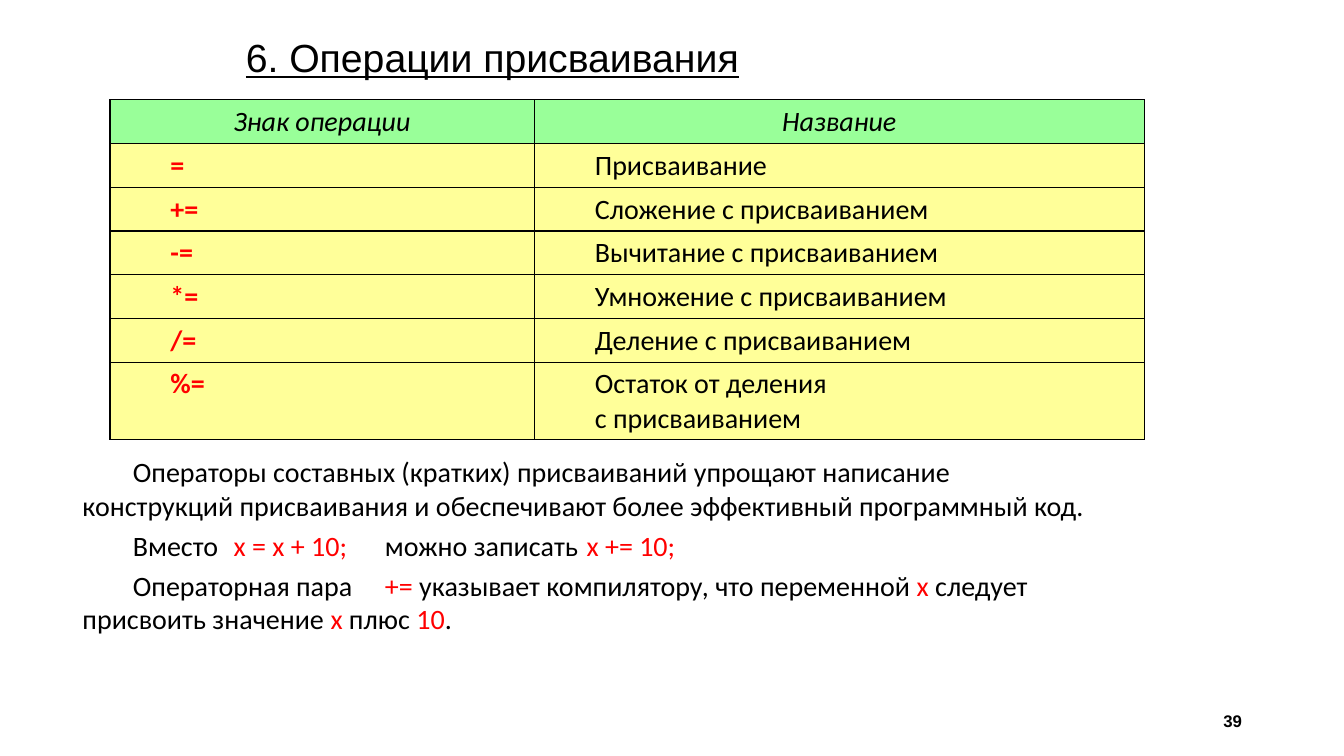
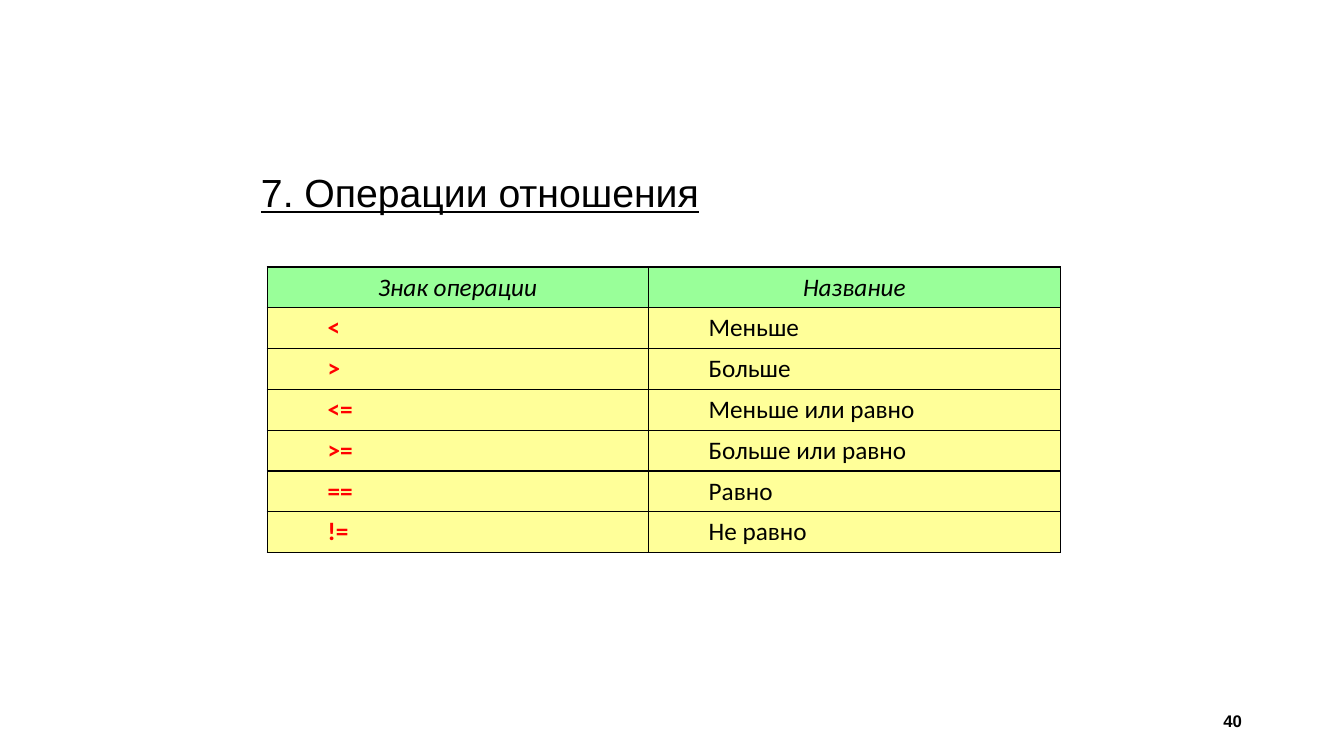
"""Build two slides on assignment and comparison operators."""
from lxml import etree
from pptx import Presentation
from pptx.dml.color import RGBColor as Color
from pptx.enum.text import MSO_ANCHOR as Anchor, PP_ALIGN as Align
from pptx.oxml.ns import qn
from pptx.util import Inches, Pt

BLACK = RGB = Color(0x00, 0x00, 0x00)
RED = Color(0xFF, 0x00, 0x00)
GREEN = Color(0x99, 0xFF, 0x99)
YELLOW = Color(0xFF, 0xFF, 0x99)
HEAD_FONT, TEXT_FONT = "Arial", "Calibri"
WIDE, HIGH = Inches(13.33), Inches(7.5)
INDENT = Inches(0.5)

HEADS = ("Знак операции", "Название")
NUMBER = (70.65, 92.67, 22.5, 5.33)
BODY = (5.4, 59.47, 77.7, 31.47)

NOTES = [
    ((), [("Операторы составных (кратких) присваиваний упрощают написание "
           "конструкций присваивания и обеспечивают более эффективный "
           "программный код.", BLACK)]),
    ((1.53, 2.84, 4.95), [("Вместо\t", BLACK), ("x = x + 10;\t", RED),
                          ("можно записать\t", BLACK), ("x += 10;", RED)]),
    ((2.8,), [("Операторная пара\t", BLACK), ("+=", RED),
              (" указывает компилятору, что переменной ", BLACK), ("x", RED),
              (" следует присвоить значение ", BLACK), ("x", RED),
              (" плюс ", BLACK), ("10", RED), (".", BLACK)]),
]

SLIDES = [
    dict(num="39", title="6. Операции присваивания",
         spot=(17.55, 3.73), grid=(8.18, 13.2), cols=(31.58, 45.38),
         rows=[5.47] * 6 + [9.33], size=20, notes=NOTES,
         ops=[("=", "Присваивание"),
              ("+=", "Сложение с присваиванием"),
              ("-=", "Вычитание с присваиванием"),
              ("*=", "Умножение с присваиванием"),
              ("/=", "Деление с присваиванием"),
              ("%=", "Остаток от деления\nс присваиванием")]),
    dict(num="40", title="7. Операции отношения",
         spot=(18.68, 21.6), grid=(19.88, 35.33), cols=(28.35, 30.68),
         rows=[5.4] * 7, size=18, notes=[],
         ops=[("<", "Меньше"), (">", "Больше"),
              ("<=", "Меньше или равно"), (">=", "Больше или равно"),
              ("==", "Равно"), ("!=", "Не равно")]),
]


def across(share):
    return round(WIDE * share / 100)


def down(share):
    return round(HIGH * share / 100)


def add_run(para, text, size, color=BLACK, face=TEXT_FONT, bold=False,
            slant=False, under=False):
    for i, line in enumerate(text.split("\n")):
        if i:
            para.add_line_break()
        run = para.add_run()
        run.text = line
        font = run.font
        font.name, font.size, font.color.rgb = face, Pt(size), color
        font.bold, font.italic, font.underline = bold, slant, under


def add_box(slide, x, y, w, h):
    box = slide.shapes.add_textbox(across(x), down(y), across(w), down(h))
    box.text_frame.word_wrap = True
    return box.text_frame


def add_edges(cell):
    props = cell._tc.get_or_add_tcPr()
    for side in ("lnL", "lnR", "lnT", "lnB"):
        line = etree.SubElement(props, qn("a:" + side), w=str(Pt(1)))
        fill = etree.SubElement(line, qn("a:solidFill"))
        etree.SubElement(fill, qn("a:srgbClr"), val=str(BLACK))


def add_grid(slide, page):
    cols = [across(c) for c in page["cols"]]
    rows = [down(r) for r in page["rows"]]
    x, y = page["grid"]
    table = slide.shapes.add_table(len(rows), len(cols), across(x), down(y),
                                   sum(cols), sum(rows)).table
    for col, width in zip(table.columns, cols):
        col.width = width
    for row, height in zip(table.rows, rows):
        row.height = height
    for r, pair in enumerate([HEADS] + page["ops"]):
        for c, text in enumerate(pair):
            cell = table.cell(r, c)
            add_edges(cell)
            cell.fill.solid()
            cell.fill.fore_color.rgb = YELLOW if r else GREEN
            para = cell.text_frame.paragraphs[0]
            sign = r > 0 and c == 0
            if r:
                para._p.get_or_add_pPr().set("marL", str(INDENT))
            else:
                para.alignment = Align.CENTER
            add_run(para, text, page["size"], RED if sign else BLACK,
                    bold=sign, slant=r == 0)


def add_notes(slide, notes):
    frame = add_box(slide, *BODY)
    for i, (stops, runs) in enumerate(notes):
        para = frame.add_paragraph() if i else frame.paragraphs[0]
        props = para._p.get_or_add_pPr()
        props.set("marL", "0")
        props.set("indent", str(INDENT))
        if stops:
            tabs = etree.SubElement(props, qn("a:tabLst"))
            for stop in stops:
                etree.SubElement(tabs, qn("a:tab"), pos=str(Inches(stop)),
                                 algn="l")
        if i:
            para.space_before = Pt(4.6)
        for text, color in runs:
            add_run(para, text, 20, color)


def add_page(deck, page):
    slide = deck.slides.add_slide(deck.slide_layouts[6])
    frame = add_box(slide, *NUMBER)
    frame.vertical_anchor = Anchor.MIDDLE
    para = frame.paragraphs[0]
    para.alignment = Align.RIGHT
    add_run(para, page["num"], 12, face=HEAD_FONT, bold=True)
    frame = add_box(slide, *page["spot"], 61.43, 7.6)
    add_run(frame.paragraphs[0], page["title"], 28, face=HEAD_FONT, under=True)
    add_grid(slide, page)
    if page["notes"]:
        add_notes(slide, page["notes"])


def main():
    deck = Presentation()
    deck.slide_width, deck.slide_height = WIDE, HIGH
    for page in SLIDES:
        add_page(deck, page)
    deck.save("out.pptx")


if __name__ == "__main__":
    main()
